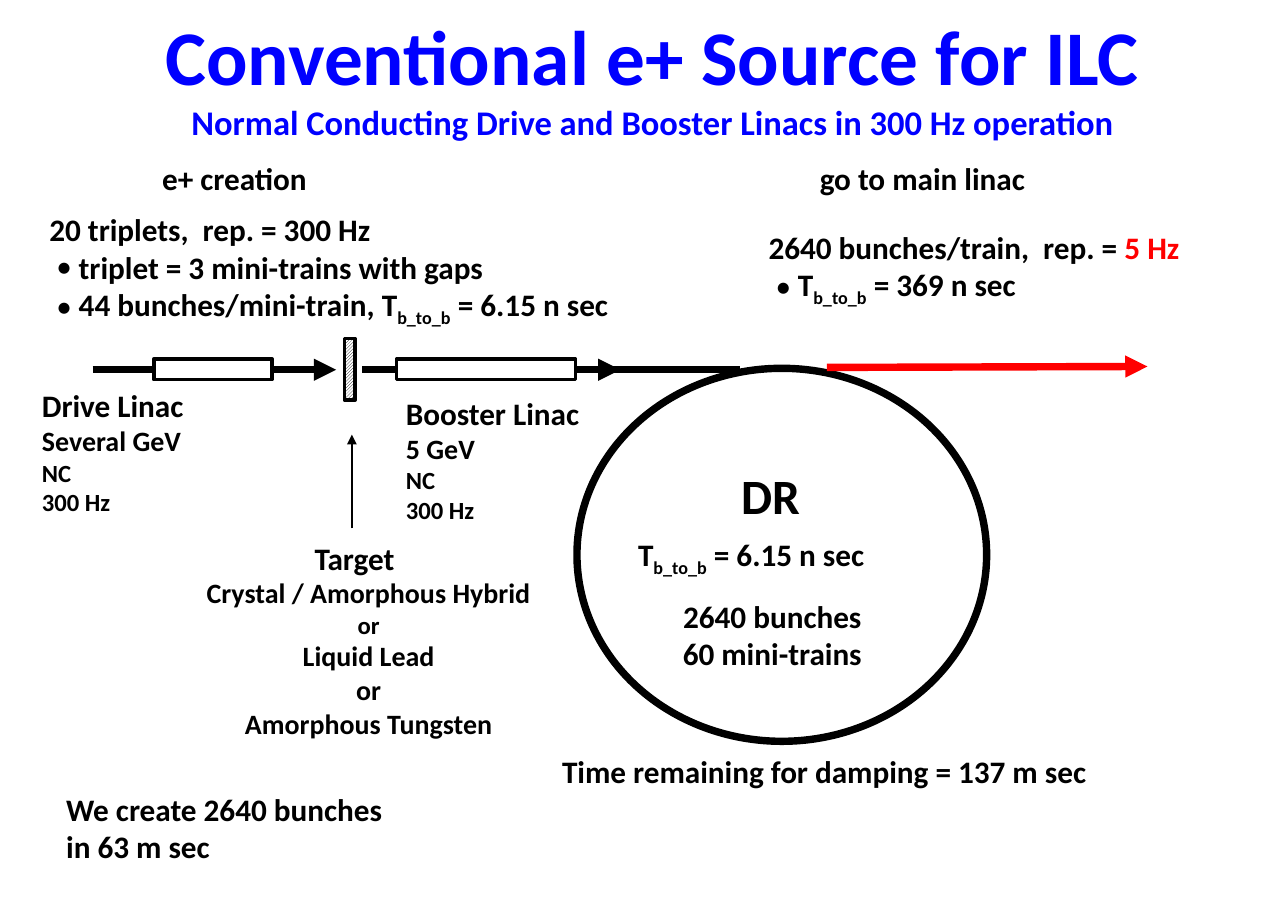
from pptx import Presentation
from pptx.dml.color import RGBColor
from pptx.enum.dml import MSO_PATTERN
from pptx.enum.shapes import MSO_CONNECTOR, MSO_SHAPE
from pptx.enum.text import MSO_AUTO_SIZE, PP_ALIGN
from pptx.oxml.ns import qn
from pptx.util import Cm, Pt
from lxml import etree

BLACK = RGBColor(0, 0, 0)
WHITE = RGBColor(255, 255, 255)
RED = RGBColor(255, 0, 0)
BLUE = RGBColor(0, 0, 255)
LEFT, CENTER = PP_ALIGN.LEFT, PP_ALIGN.CENTER
RECT, OVAL = MSO_SHAPE.RECTANGLE, MSO_SHAPE.OVAL
STRAIGHT = MSO_CONNECTOR.STRAIGHT
HATCH = MSO_PATTERN.LIGHT_UPWARD_DIAGONAL
FIT = MSO_AUTO_SIZE.SHAPE_TO_FIT_TEXT

CM_PER_INCH = 2.54
SLIDE_WIDTH = Cm(10.88 * CM_PER_INCH)
SLIDE_HEIGHT = Cm(7.76 * CM_PER_INCH)
BEAM_Y = 7.93
LINAC_TOP, LINAC_HEIGHT = 7.7, 0.44
HEADING_Y = 3.29
LINE_HEIGHT = 1.09
SUB = "b_to_b"


class SlideBuilder:
    font = "Calibri"
    size = 19
    beam_width = 4.5
    box_width = 2.25

    def __init__(self, slide):
        self.shapes = slide.shapes

    def text(self, x, y, w, h, paragraphs, color=BLACK, align=LEFT):
        sp = self.shapes.add_textbox(Cm(x), Cm(y), Cm(w), Cm(h))
        tf = sp.text_frame
        tf.word_wrap = True
        tf.auto_size = FIT
        tf.margin_left = tf.margin_right = Cm(0.28)
        tf.margin_top = tf.margin_bottom = Cm(0.13)
        for i, (runs, size, bullet) in enumerate(paragraphs):
            p = tf.add_paragraph() if i else tf.paragraphs[0]
            p.alignment = align
            if bullet:
                self.bullet(p)
            for run in runs:
                self.run(p, run, size, color)

    def bullet(self, p):
        pPr = p._p.get_or_add_pPr()
        pPr.set("marL", str(Cm(0.63)))
        pPr.set("indent", str(Cm(-0.48)))
        etree.SubElement(pPr, qn("a:buFont")).set("typeface", self.font)
        etree.SubElement(pPr, qn("a:buChar")).set("char", "•")

    def run(self, p, run, size, color):
        text, color = run if isinstance(run, tuple) else (run, color)
        r = p.add_run()
        r.text = text
        r.font.name = self.font
        r.font.size = Pt(size)
        r.font.bold = True
        r.font.color.rgb = color
        if text == SUB:
            r._r.get_or_add_rPr().set("baseline", "-25000")

    def shape(self, kind, x, y, w, h, width):
        sp = self.shapes.add_shape(kind, Cm(x), Cm(y), Cm(w), Cm(h))
        sp.shadow.inherit = False
        sp.line.color.rgb = BLACK
        sp.line.width = Pt(width)
        return sp

    def ring(self, x, y, w, h):
        self.shape(OVAL, x, y, w, h, self.beam_width).fill.background()

    def linac(self, x, w):
        sp = self.shape(RECT, x, LINAC_TOP, w, LINAC_HEIGHT, self.box_width)
        sp.fill.solid()
        sp.fill.fore_color.rgb = WHITE

    def target(self, x, y, w, h):
        fill = self.shape(RECT, x, y, w, h, self.box_width).fill
        fill.patterned()
        fill.pattern = HATCH
        fill.fore_color.rgb = BLACK
        fill.back_color.rgb = WHITE

    def line(self, x1, y1, x2, y2, color=BLACK, width=beam_width, arrow=True):
        cn = self.shapes.add_connector(STRAIGHT, Cm(x1), Cm(y1), Cm(x2), Cm(y2))
        cn.line.color.rgb = color
        cn.line.width = Pt(width)
        if arrow:
            ln = cn.line._get_or_add_ln()
            etree.SubElement(ln, qn("a:tailEnd")).set("type", "triangle")
        etree.SubElement(cn._element.spPr, qn("a:effectLst"))


def para(*runs, size=SlideBuilder.size, bullet=False):
    return runs, size, bullet


def linac_label(name, energy):
    return [para(name), para(energy, size=17),
            para("NC", size=15), para("300 Hz", size=15)]


def main():
    prs = Presentation()
    prs.slide_width, prs.slide_height = SLIDE_WIDTH, SLIDE_HEIGHT
    s = SlideBuilder(prs.slides.add_slide(prs.slide_layouts[6]))

    s.ring(12.38, 7.9, 8.79, 8)
    s.line(17.74, 7.88, 24.62, 7.86, RED)
    s.text(0.78, 4.39, 15.37, 2.72, [
        para("20 triplets,  rep. = 300 Hz"),
        para("triplet = 3 mini-trains with gaps", bullet=True),
        para("44 bunches/mini-train, T", SUB, " = 6.15 n sec", bullet=True),
    ])
    s.text(15.62, 9.84, 2.97, 1.55, [para("DR", size=30)])
    s.text(13.41, 11.36, 7.26, LINE_HEIGHT, [para("T", SUB, " = 6.15 n sec")])
    s.text(16.21, 4.76, 11.07, 1.91, [
        para("2640 bunches/train,  rep. = ", ("5 Hz", RED)),
        para("T", SUB, " = 369 n sec", bullet=True),
    ])
    s.line(12.8, BEAM_Y, 15.88, BEAM_Y, arrow=False)
    s.text(3.2, HEADING_Y, 7.59, LINE_HEIGHT, [para("e+ creation")])
    s.text(17.31, HEADING_Y, 9.78, LINE_HEIGHT, [para("go to main linac")])
    s.text(11.78, 16.01, 15.62, LINE_HEIGHT,
           [para("Time remaining for damping = 137 m sec")])
    s.text(1.14, 16.82, 8.99, 1.91,
           [para("We create 2640 bunches"), para("in 63 m sec")])

    s.line(1.99, BEAM_Y, 7.21, BEAM_Y)
    s.linac(3.3, 2.54)
    s.target(7.39, 7.26, 0.23, 1.32)
    s.line(7.77, BEAM_Y, 13.31, BEAM_Y)
    s.linac(8.51, 3.84)
    s.text(8.43, 8.32, 5.54, 3.1, linac_label("Booster Linac", "5 GeV"))
    s.text(0.62, 8.16, 7.09, 3.1, linac_label("Drive Linac", "Several GeV"))
    s.line(7.55, 11.33, 7.55, 9.32, width=1.5)
    s.text(6.47, 11.44, 3.02, LINE_HEIGHT, [para("Target")])
    s.text(1.38, 12.22, 13.06, 3.81, [
        para("Crystal / Amorphous Hybrid", size=17),
        para("or", size=15),
        para("Liquid Lead", size=17),
        para("or", size=17),
        para("Amorphous Tungsten", size=17),
    ], align=CENTER)
    s.text(13.65, 12.68, 5.84, 1.91,
           [para("2640 bunches"), para("60 mini-trains")], align=CENTER)

    s.text(1.71, 0.05, 24.59, 3.18, [
        para("Conventional e+ Source for ILC", size=47),
        para("Normal Conducting Drive and Booster Linacs in 300 Hz operation", size=21),
    ], BLUE, CENTER)

    prs.save("out.pptx")


if __name__ == "__main__":
    main()
